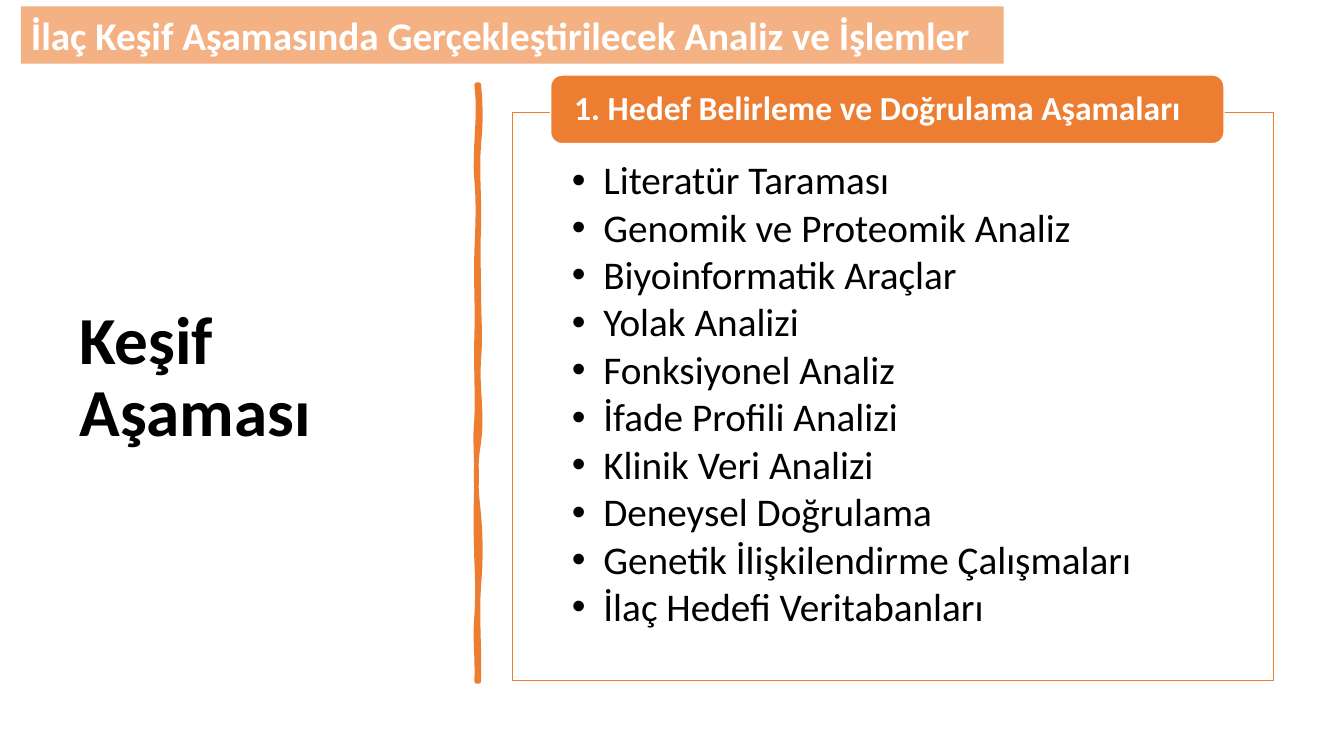
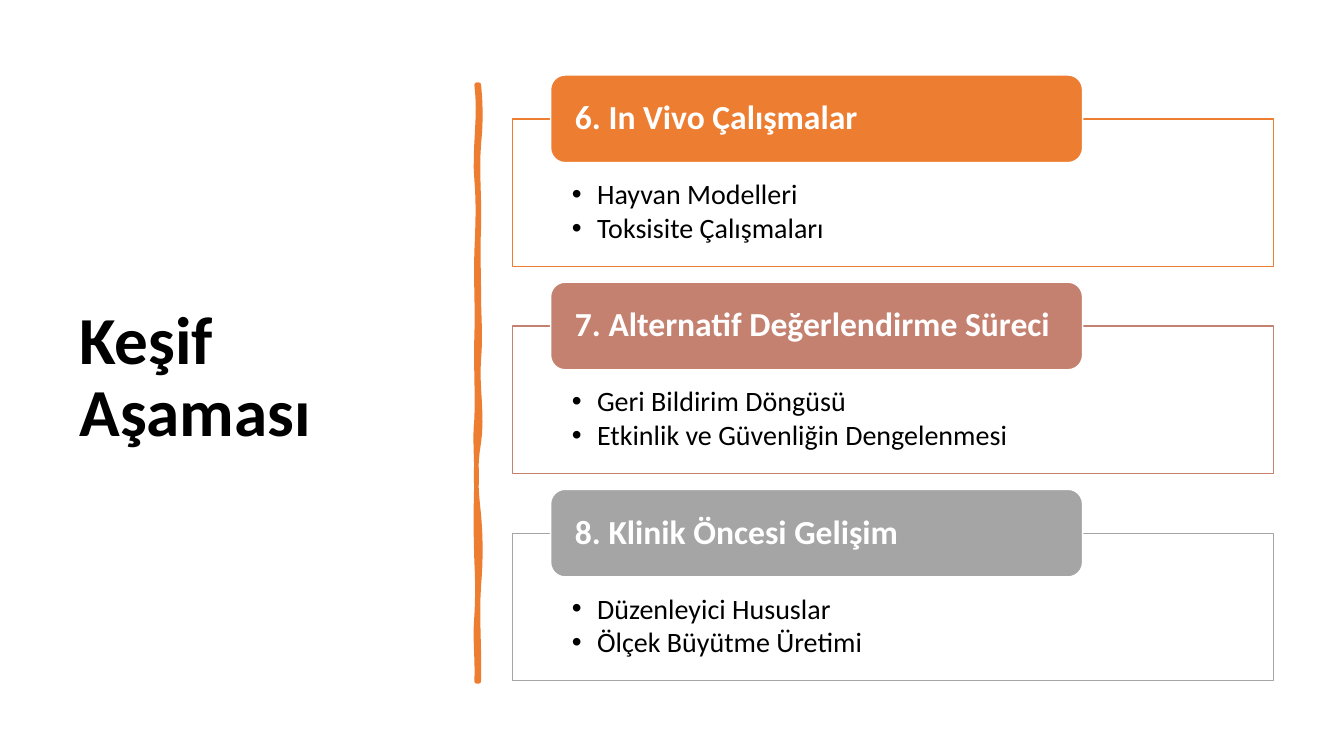
"""Build two slides on the drug discovery stage."""
from dataclasses import dataclass

from lxml.etree import SubElement
from pptx import Presentation
from pptx.dml.color import RGBColor as Rgb
from pptx.enum.shapes import MSO_SHAPE as Kind
from pptx.enum.text import MSO_ANCHOR as Anchor, MSO_AUTO_SIZE as Auto, PP_ALIGN as Align
from pptx.oxml.ns import qn
from pptx.util import Pt


@dataclass(frozen=True)
class Theme:
    """Colours, font and type sizes of the deck."""
    font: str = "Calibri"
    ink: str = "000000"
    paper: str = "FFFFFF"
    orange: str = "ED7D31"
    peach: str = "F4B183"
    rose: str = "C48170"
    grey: str = "A5A5A5"
    title: int = 48
    band: int = 28
    tab: int = 24


@dataclass(frozen=True)
class Look:
    """Measures of a panel: tab, list inset, indent and type size."""
    wide: float
    high: float
    lift: float
    top: float
    dent: float
    size: int


THEME = Theme()
LARGE = Look(wide=481, high=49, lift=26.6, top=34.6, dent=22.5, size=28)
SMALL = Look(wide=380, high=62.6, lift=31.4, top=44, dent=18, size=20)

TITLE = (49.5, 50.5, 269.5, 440)
RULE = (340.5, 60.5, 1.5, 426.2)
BAND = (15, 4.5, 702, 41)
PANELS = (366, 53.6, 543.5, 432.5)
GAP = 11.4

# Each stretch of an edge: its end as a share of the height, then two bends.
RIGHT = [(0.1, 1.5, 1.5), (0.24, -1.5, 0.7), (0.35, -0.7, 0), (0.46, 0, 1.5),
         (0.6, -1.5, 3), (0.72, -3, -2), (0.84, 1.5, 1.5), (1, -1.5, 0.7)]
LEFT = [(0.89, 0.7, -1.5), (0.8, 0.7, 0.7), (0.66, -0.7, -0.7), (0.56, 0, -1.5),
        (0.42, 0.7, -0.7), (0.28, 0.7, -0.7), (0.16, 0.7, 1.5), (0, -2, 3)]


def place(shape, box):
    """Move and size a shape to a box."""
    shape.left, shape.top, shape.width, shape.height = map(Pt, box)


def paint(shape, fill, line=None, width=1):
    """Set the fill and outline of a shape."""
    shape.fill.solid()
    shape.fill.fore_color.rgb = Rgb.from_string(fill)
    if line:
        shape.line.color.rgb = Rgb.from_string(line)
        shape.line.width = Pt(width)
    else:
        shape.line.fill.background()


def frame(shape, anchor, inset):
    """Prepare the text frame of a shape."""
    text = shape.text_frame
    text.word_wrap, text.auto_size = True, Auto.NONE
    text.vertical_anchor = anchor
    (text.margin_left, text.margin_top,
     text.margin_right, text.margin_bottom) = map(Pt, inset)
    return text


def write(para, words, size, tint, bold=False, lead=0.9):
    """Add one run to a left-aligned paragraph."""
    para.alignment, para.line_spacing = Align.LEFT, lead
    para.space_before = Pt(0)
    run = para.add_run()
    run.text = words
    font = run.font
    font.name, font.size, font.bold = THEME.font, Pt(size), bold
    font.color.rgb = Rgb.from_string(tint)


def block(slide, kind, box, fill, line=None):
    """Add a flat preset shape."""
    shape = slide.shapes.add_shape(kind, *map(Pt, box))
    shape.shadow.inherit = False
    paint(shape, fill, line)
    return shape


def bullet(para, dent):
    """Give a paragraph a round bullet and a hanging indent."""
    props = para._p.get_or_add_pPr()
    props.set("marL", str(Pt(dent)))
    props.set("indent", str(-Pt(dent)))
    SubElement(props, qn("a:buFont"), typeface="Arial")
    SubElement(props, qn("a:buChar"), char="•")


def items(holder, lines, look):
    """Fill a body placeholder with a bulleted list."""
    text = frame(holder, Anchor.TOP, (42.5, look.top, 42.5, 11.5))
    for pos, words in enumerate(lines):
        para = text.add_paragraph() if pos else text.paragraphs[0]
        bullet(para, look.dent)
        write(para, words, look.size, THEME.ink)
        para.space_after = Pt(round(look.size * 0.13, 2))


def panel(slide, holder, box, look, tint, head, lines):
    """Draw an outlined list with a tab over its top edge."""
    x, y, w, h = box
    place(holder, (x, y + look.lift, w, h - look.lift))
    paint(holder, THEME.paper, tint)
    items(holder, lines, look)
    tab = block(slide, Kind.ROUNDED_RECTANGLE, (x + 27.3, y, look.wide, look.high),
                tint, THEME.paper)
    text = frame(tab, Anchor.MIDDLE, (14.4, 0, 14.4, 0))
    write(text.paragraphs[0], head, THEME.tab, THEME.paper, True)


def edge(x, y, h, start, parts, steps=8):
    """List the points of a wavy edge made of cubic curves."""
    dots = []
    for end, one, two in parts:
        for step in range(1, steps + 1):
            t = step / steps
            bend = 3 * t * (1 - t) * ((1 - t) * one + t * two)
            dots.append((Pt(x + bend), Pt(y + h * (start + (end - start) * t))))
        start = end
    return dots


def rule(slide, box):
    """Draw the hand-drawn upright line."""
    x, y, w, h = box
    dots = edge(x + w, y, h, 0, RIGHT)
    dots += [(Pt(x), Pt(y + h))] + edge(x, y, h, 1, LEFT)
    pen = slide.shapes.build_freeform(Pt(x + w), Pt(y))
    pen.add_line_segments(dots, close=True)
    shape = pen.convert_to_shape()
    shape.shadow.inherit = False
    paint(shape, THEME.orange, THEME.orange, 3.25)


def band(slide, box, words):
    """Draw the heading band."""
    shape = block(slide, Kind.RECTANGLE, box, THEME.peach)
    text = frame(shape, Anchor.MIDDLE, (7.2, 3.6, 7.2, 3.6))
    write(text.paragraphs[0], words, THEME.band, THEME.paper, True, 1)


def page(deck, layout, look, parts):
    """Add a slide with title, upright line and stacked panels."""
    slide = deck.slides.add_slide(deck.slide_layouts.get_by_name(layout))
    title = slide.shapes.title
    place(title, TITLE)
    text = frame(title, Anchor.MIDDLE, (7.2, 3.6, 7.2, 3.6))
    write(text.paragraphs[0], "Keşif Aşaması", THEME.title, THEME.ink, True)
    rule(slide, RULE)
    x, y, w, h = PANELS
    high = (h - GAP * (len(parts) - 1)) / len(parts)
    bodies = list(slide.placeholders)[1:]
    for pos, (holder, part) in enumerate(zip(bodies, parts)):
        panel(slide, holder, (x, y + pos * (high + GAP), w, high), look, *part)
    for spare in bodies[len(parts):]:
        spare.element.getparent().remove(spare.element)
    return slide


def main():
    """Build and save the deck."""
    deck = Presentation()
    deck.slide_width, deck.slide_height = Pt(960), Pt(540)
    first = page(deck, "Title and Content", LARGE, [
        (THEME.orange, "1. Hedef Belirleme ve Doğrulama Aşamaları", [
            "Literatür Taraması", "Genomik ve Proteomik Analiz",
            "Biyoinformatik Araçlar", "Yolak Analizi", "Fonksiyonel Analiz",
            "İfade Profili Analizi", "Klinik Veri Analizi", "Deneysel Doğrulama",
            "Genetik İlişkilendirme Çalışmaları", "İlaç Hedefi Veritabanları"])])
    band(first, BAND, "İlaç Keşif Aşamasında Gerçekleştirilecek Analiz ve İşlemler")
    page(deck, "Comparison", SMALL, [
        (THEME.orange, "6. In Vivo Çalışmalar",
         ["Hayvan Modelleri", "Toksisite Çalışmaları"]),
        (THEME.rose, "7. Alternatif Değerlendirme Süreci",
         ["Geri Bildirim Döngüsü", "Etkinlik ve Güvenliğin Dengelenmesi"]),
        (THEME.grey, "8. Klinik Öncesi Gelişim",
         ["Düzenleyici Hususlar", "Ölçek Büyütme Üretimi"])])
    deck.save("out.pptx")


if __name__ == "__main__":
    main()
